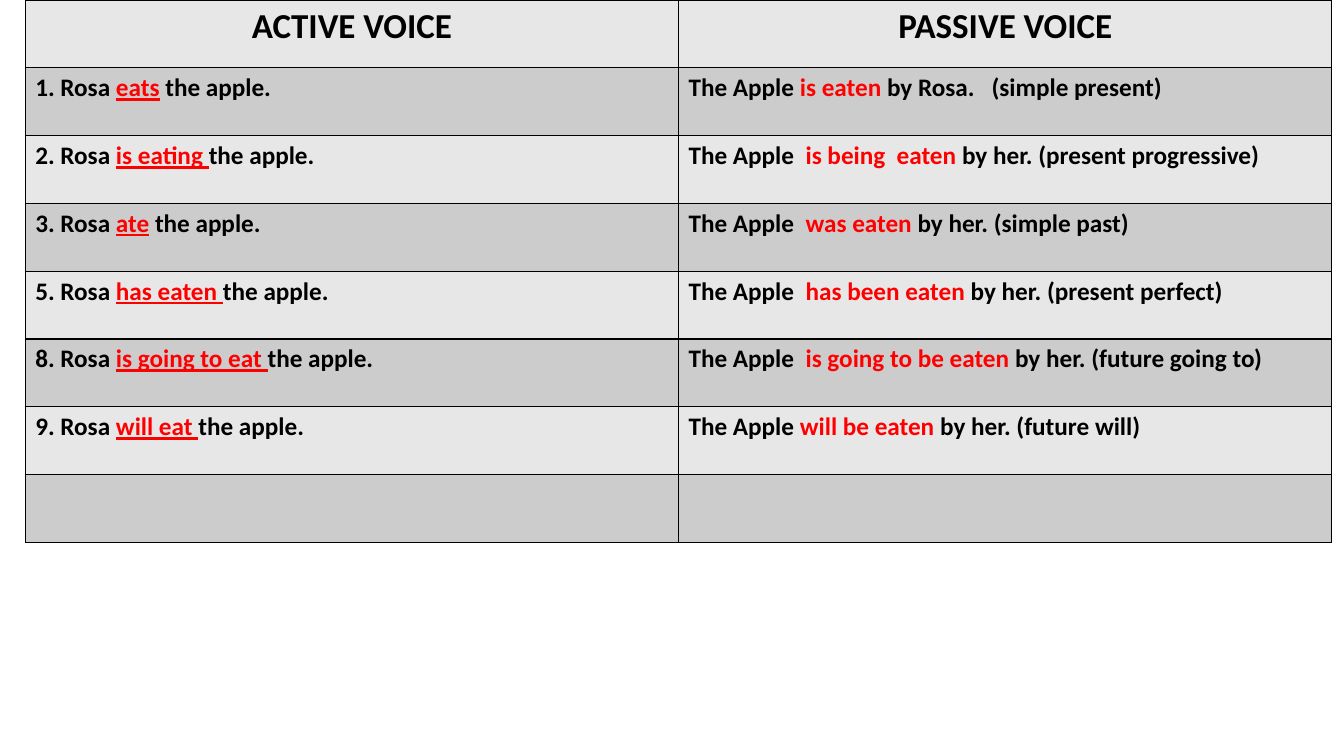
from lxml import etree
from pptx import Presentation
from pptx.dml.color import RGBColor
from pptx.enum import text
from pptx.oxml import ns
from pptx.util import Inches, Pt

COLOURS = {"text": "000000", "verb": "FF0000", "border": "000000",
           "light": "E7E7E7", "dark": "CCCCCC"}
FONT = "Calibri"
HEADINGS = ("ACTIVE VOICE", "PASSIVE VOICE")

# Each sentence: words before the verb, the verb, words after it
SENTENCES = [
    (("1. Rosa ", "eats", " the apple."),
     ("The Apple ", "is eaten ", "by Rosa.   (simple present)")),
    (("2. Rosa ", "is eating ", "the apple."),
     ("The Apple  ", "is being  eaten ", "by her. (present progressive)")),
    (("3. Rosa ", "ate", " the apple."),
     ("The Apple  ", "was eaten ", "by her. (simple past)")),
    (("5. Rosa ", "has eaten ", "the apple."),
     ("The Apple ", " has been eaten ", "by her. (present perfect)")),
    (("8. Rosa ", "is going to eat ", "the apple."),
     ("The Apple  ", "is going to be eaten ", "by her. (future going to)")),
    (("9. Rosa ", "will eat ", "the apple."),
     ("The Apple ", "will be eaten ", "by her. (future will)")),
]
ROW_COUNT = len(SENTENCES) + 2  # heading row above, empty row below


def colour(name):
    return RGBColor.from_string(COLOURS[name])


def add_borders(cell, width=Pt(1)):
    properties = cell._tc.get_or_add_tcPr()
    for index, side in enumerate(("lnL", "lnR", "lnT", "lnB")):
        line = etree.Element(ns.qn(f"a:{side}"), w=str(width))
        fill = etree.SubElement(line, ns.qn("a:solidFill"))
        etree.SubElement(fill, ns.qn("a:srgbClr"), val=COLOURS["border"])
        properties.insert(index, line)


def style_cell(cell, shade):
    cell.fill.solid()
    cell.fill.fore_color.rgb = colour(shade)
    add_borders(cell)


def style_paragraph(para, size):
    para.font.name = FONT
    para.font.size = Pt(size)
    para.font.bold = True


def write_heading(cell, heading):
    para = cell.text_frame.paragraphs[0]
    para.alignment = text.PP_ALIGN.CENTER
    style_paragraph(para, 25)
    para.font.color.rgb = colour("text")
    para.add_run().text = heading


def write_sentence(cell, parts, underline_verb):
    para = cell.text_frame.paragraphs[0]
    style_paragraph(para, 18)
    for part, role in zip(parts, ("text", "verb", "text")):
        span = para.add_run()
        span.text = part
        span.font.color.rgb = colour(role)
        if role == "verb" and underline_verb:
            span.font.underline = True


def add_voice_table(page):
    frame = page.shapes.add_table(ROW_COUNT, 2, Inches(0.25), Inches(0),
                                  Inches(12.96), Inches(5.38))
    table = frame.table
    for number, row in enumerate(table.rows):
        for cell in row.cells:
            style_cell(cell, "dark" if number % 2 else "light")

    # Headings
    for column, heading in enumerate(HEADINGS):
        write_heading(table.cell(0, column), heading)

    # Sentence pairs
    for number, (active, passive) in enumerate(SENTENCES, start=1):
        write_sentence(table.cell(number, 0), active, underline_verb=True)
        write_sentence(table.cell(number, 1), passive, underline_verb=False)


def main():
    deck = Presentation()
    deck.slide_width = Inches(13.33)
    deck.slide_height = Inches(7.5)
    page = deck.slides.add_slide(deck.slide_layouts[6])
    add_voice_table(page)
    deck.save("out.pptx")


if __name__ == "__main__":
    main()
